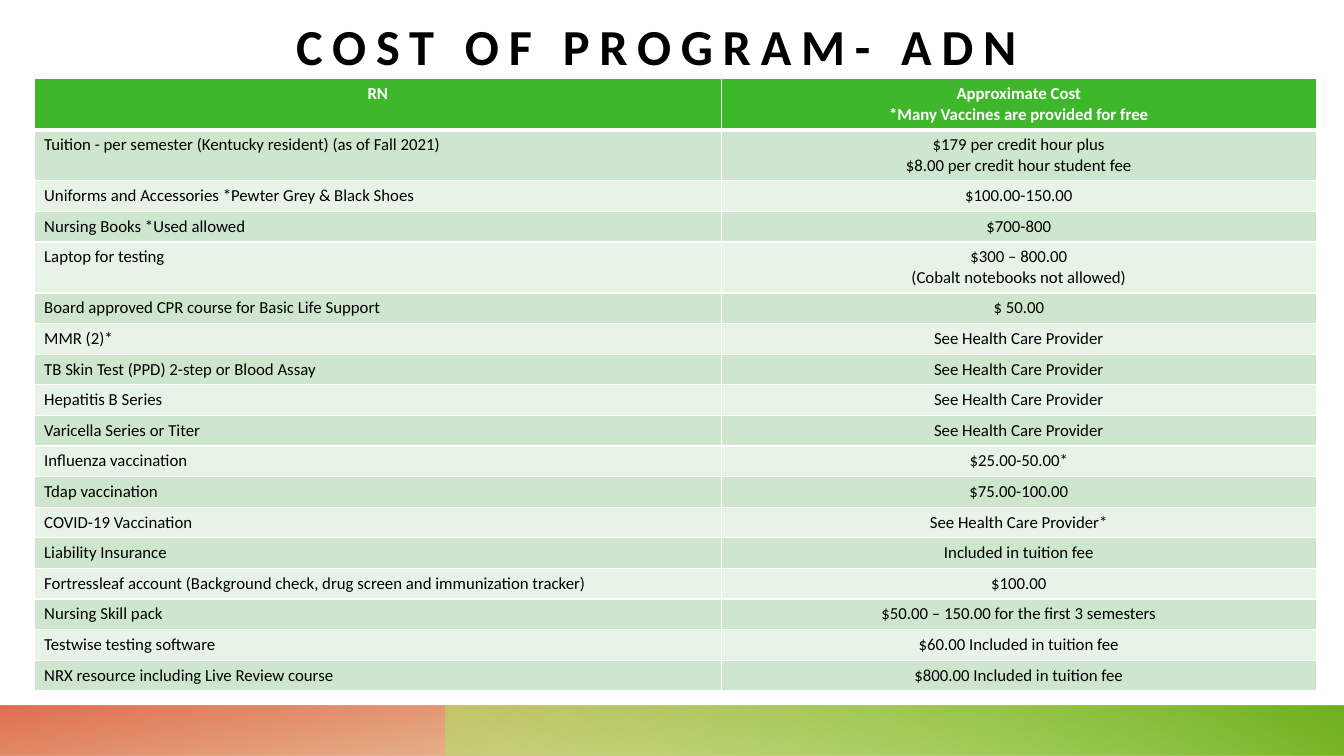
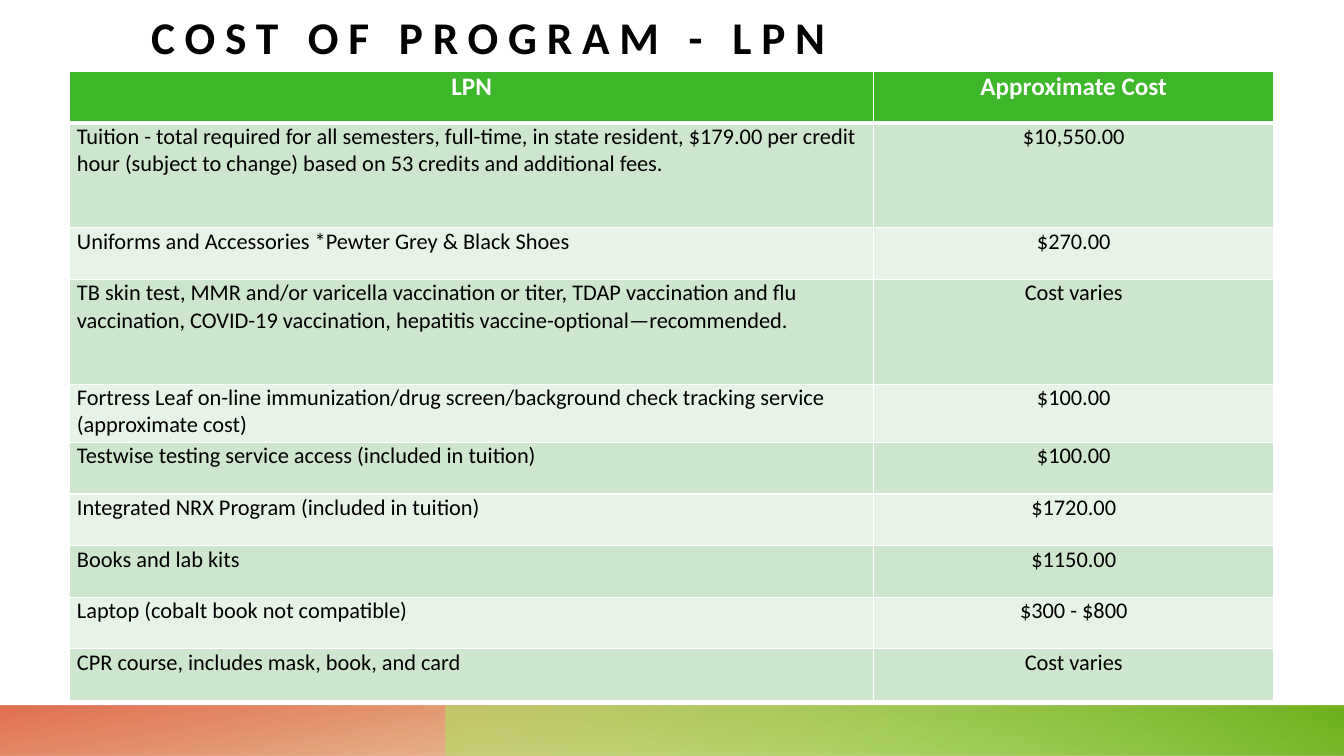
from lxml import etree
from pptx import Presentation
from pptx.dml.color import RGBColor
from pptx.enum.shapes import MSO_SHAPE
from pptx.enum.text import MSO_ANCHOR, MSO_AUTO_SIZE, PP_ALIGN
from pptx.oxml.ns import qn
from pptx.util import Cm, Pt

RECTANGLE = MSO_SHAPE.RECTANGLE
BOTTOM = MSO_ANCHOR.BOTTOM
NO_AUTOFIT = MSO_AUTO_SIZE.NONE
LEFT, CENTER = PP_ALIGN.LEFT, PP_ALIGN.CENTER

BLACK = RGBColor(0x00, 0x00, 0x00)
WHITE = RGBColor(0xFF, 0xFF, 0xFF)
HEADER_GREEN = RGBColor(0x3E, 0xB7, 0x2B)
ROW_GREENS = (RGBColor(0xCE, 0xE6, 0xCD), RGBColor(0xE8, 0xF3, 0xE8))
OCHRE = RGBColor(0xCA, 0x89, 0x22)
BRICK = RGBColor(0xDC, 0x55, 0x34)
LIME = RGBColor(0xAB, 0xE5, 0x64)
LEAF = RGBColor(0x6F, 0xB1, 0x1E)

FONT = "Calibri"
SLIDE_WIDTH, SLIDE_HEIGHT = Cm(33.87), Cm(19.05)
BAND_HEIGHT = Cm(1.27)
GREEN_BAND_LEFT = Cm(11.22)
TITLE_SPACING = 700

BANDS = (
    dict(left=0, rotation=180, angle=260,
         stops=((0.14, OCHRE, 28), (1, BRICK, 85))),
    dict(left=GREEN_BAND_LEFT, rotation=0, angle=120,
         stops=((0.09, LIME, 55), (0.99, LEAF, 100))),
)

PROVIDER = "See Health Care Provider"
ADN_COSTS = (
    ("RN", "Approximate Cost\n*Many Vaccines are provided for free"),
    ("Tuition - per semester (Kentucky resident) (as of Fall 2021)",
     "$179 per credit hour plus\n$8.00 per credit hour student fee"),
    ("Uniforms and Accessories *Pewter Grey & Black Shoes", "$100.00-150.00"),
    ("Nursing Books *Used allowed", "$700-800"),
    ("Laptop for testing", "$300 – 800.00\n(Cobalt notebooks not allowed)"),
    ("Board approved CPR course for Basic Life Support", "$ 50.00"),
    ("MMR (2)*", PROVIDER),
    ("TB Skin Test (PPD) 2-step or Blood Assay", PROVIDER),
    ("Hepatitis B Series", PROVIDER),
    ("Varicella Series or Titer", PROVIDER),
    ("Influenza vaccination", "$25.00-50.00*"),
    ("Tdap vaccination", "$75.00-100.00"),
    ("COVID-19 Vaccination", PROVIDER + "*"),
    ("Liability Insurance", "Included in tuition fee"),
    ("Fortressleaf account (Background check, drug screen and immunization tracker)",
     "$100.00"),
    ("Nursing Skill pack", "$50.00 – 150.00 for the first 3 semesters"),
    ("Testwise testing software", "$60.00 Included in tuition fee"),
    ("NRX resource including Live Review course", "$800.00 Included in tuition fee"),
)
LPN_COSTS = (
    ("LPN", "Approximate Cost"),
    ("Tuition - total required for all semesters, full-time, in state resident, "
     "$179.00 per credit hour (subject to change) based on 53 credits and "
     "additional fees.", "$10,550.00"),
    ("Uniforms and Accessories *Pewter Grey & Black Shoes", "$270.00"),
    ("TB skin test, MMR and/or varicella vaccination or titer, TDAP vaccination "
     "and flu vaccination, COVID-19 vaccination, hepatitis "
     "vaccine-optional—recommended.", "Cost varies"),
    ("Fortress Leaf on-line immunization/drug screen/background check tracking "
     "service (approximate cost)", "$100.00"),
    ("Testwise testing service access (included in tuition)", "$100.00"),
    ("Integrated NRX Program (included in tuition)", "$1720.00"),
    ("Books and lab kits", "$1150.00"),
    ("Laptop (cobalt book not compatible)", "$300 - $800"),
    ("CPR course, includes mask, book, and card", "Cost varies"),
)

ADN_HEIGHTS = [Cm(1.28 if "\n" in cost else 0.77) for _, cost in ADN_COSTS]
LPN_HEIGHTS = [Cm(h) for h in (1.3, 2.64, 1.3, 2.64, 1.47, *[1.3] * 5)]
LPN_MARGINS = dict(margin_left=Cm(0.19), margin_right=Cm(0.19),
                   margin_top=0, margin_bottom=0)
LPN_SPACING = dict(space_before=Pt(5), space_after=Pt(5))


def apply_format(target, values):
    for attribute, value in values.items():
        setattr(target, attribute, value)


def format_text(frame, size, color, bold, paragraph_format):
    for paragraph in frame.paragraphs:
        apply_format(paragraph, paragraph_format)
        for run in paragraph.runs:
            apply_format(run.font, dict(name=FONT, size=Pt(size), bold=bold))
            run.font.color.rgb = color


def add_band(slide, left, rotation, angle, stops):
    band = slide.shapes.add_shape(RECTANGLE, left, SLIDE_HEIGHT - BAND_HEIGHT,
                                  SLIDE_WIDTH - left, BAND_HEIGHT)
    band.shadow.inherit = False
    band.line.fill.background()
    band.rotation = rotation
    band.element.spPr.find(qn("a:xfrm")).set("flipH", "1")
    band.fill.gradient()
    band.fill.gradient_angle = angle
    for stop, (position, color, _) in zip(band.fill.gradient_stops, stops):
        stop.position = position
        stop.color.rgb = color
    colors = band.element.spPr.iter(qn("a:srgbClr"))
    for color, (_, _, opacity) in zip(colors, stops):
        etree.SubElement(color, qn("a:alpha")).set("val", str(opacity * 1000))
    return band


def add_bands_to_master(prs, slide):
    master_tree = prs.slide_master.shapes.element
    for order, band_format in enumerate(BANDS):
        band = add_band(slide, **band_format).element
        band.nvSpPr.cNvPr.set("id", str(100 + order))
        master_tree.insert(2 + order, band)


def set_title(slide, text, box, size, alignment):
    title = slide.shapes.title
    apply_format(title, dict(zip(("left", "top", "width", "height"), box)))
    frame = title.text_frame
    frame.text = text
    apply_format(frame, dict(margin_left=0, margin_right=0, margin_top=0,
                             margin_bottom=0, vertical_anchor=BOTTOM,
                             word_wrap=True, auto_size=NO_AUTOFIT))
    format_text(frame, size, BLACK, True, dict(alignment=alignment))
    for run in frame.paragraphs[0].runs:
        run.font._element.set("spc", str(TITLE_SPACING))


def add_border(cell, side, width):
    properties = cell._tc.get_or_add_tcPr()
    border = etree.Element(qn(f"a:ln{side}"), w=str(Pt(width)))
    fill = etree.SubElement(border, qn("a:solidFill"))
    etree.SubElement(fill, qn("a:srgbClr")).set("val", str(WHITE))
    properties.insert("LRTB".index(side), border)


def format_cell(cell, row, column, text_size, header_size, margins, spacing):
    is_header = row == 0
    cell.fill.solid()
    cell.fill.fore_color.rgb = HEADER_GREEN if is_header else ROW_GREENS[(row - 1) % 2]
    apply_format(cell, margins)
    alignment = CENTER if is_header or column == 1 else LEFT
    format_text(cell.text_frame, header_size if is_header else text_size,
                WHITE if is_header else BLACK, is_header,
                dict(alignment=alignment, **spacing))
    for side in "LRTB":
        heavy = (is_header and side == "B") or (row == 1 and side == "T")
        add_border(cell, side, 3 if heavy else 1)


def add_cost_table(slide, costs, left, top, widths, heights, text_size,
                   header_size, margins, spacing):
    table = slide.shapes.add_table(len(costs), len(widths), left, top,
                                   sum(widths), sum(heights)).table
    for column, width in zip(table.columns, widths):
        column.width = width
    for row, height in zip(table.rows, heights):
        row.height = height
    for row, texts in enumerate(costs):
        for column, text in enumerate(texts):
            cell = table.cell(row, column)
            cell.text = text
            format_cell(cell, row, column, text_size, header_size, margins, spacing)


def main():
    prs = Presentation()
    prs.slide_width, prs.slide_height = SLIDE_WIDTH, SLIDE_HEIGHT
    title_only = prs.slide_layouts[5]

    adn = prs.slides.add_slide(title_only)
    add_bands_to_master(prs, adn)
    set_title(adn, "COST OF PROGRAM- ADN",
              (Cm(0.84), Cm(0.18), Cm(31.42), Cm(1.73)), 36, CENTER)
    add_cost_table(adn, ADN_COSTS, Cm(0.86), Cm(1.98), (Cm(17.32), Cm(14.99)),
                   ADN_HEIGHTS, 12, 12, {}, {})

    lpn = prs.slides.add_slide(title_only)
    set_title(lpn, "COST OF PROGRAM - LPN",
              (Cm(3.81), Cm(0.13), Cm(28.45), Cm(1.47)), 32.4, LEFT)
    add_cost_table(lpn, LPN_COSTS, Cm(1.75), Cm(1.8), (Cm(20.27), Cm(10.08)),
                   LPN_HEIGHTS, 16, 18, LPN_MARGINS, LPN_SPACING)

    prs.save("out.pptx")


if __name__ == "__main__":
    main()
